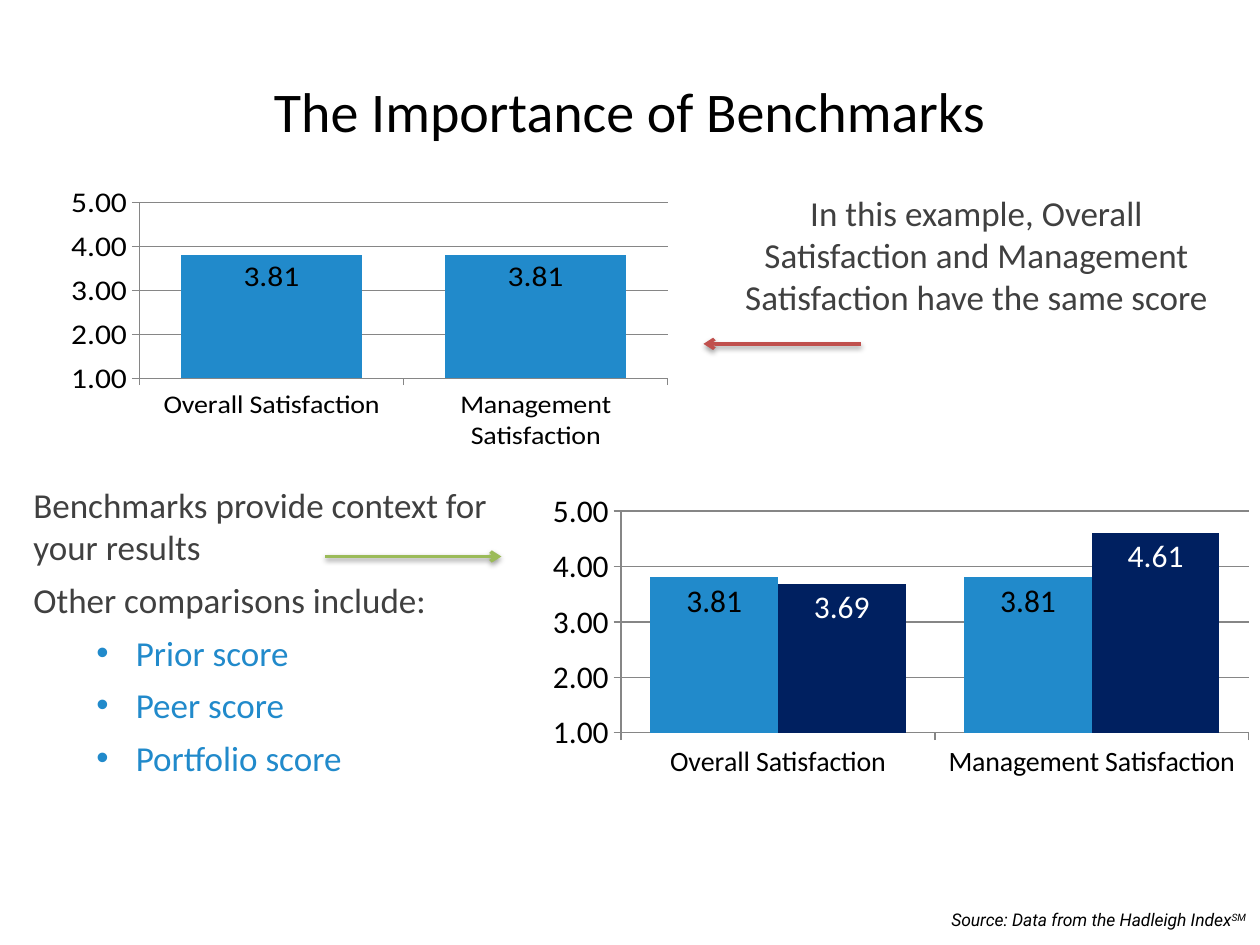
from lxml import etree
from pptx import Presentation
from pptx.chart.data import CategoryChartData
from pptx.dml.color import RGBColor
from pptx.enum.chart import XL_CHART_TYPE, XL_LABEL_POSITION, XL_TICK_MARK
from pptx.enum.shapes import MSO_CONNECTOR
from pptx.enum.text import MSO_ANCHOR, PP_ALIGN
from pptx.oxml import parse_xml
from pptx.oxml.ns import qn
from pptx.util import Pt

BLACK = RGBColor(0x00, 0x00, 0x00)
WHITE = RGBColor(0xFF, 0xFF, 0xFF)
GRAY = RGBColor(0x40, 0x40, 0x40)
GRID = RGBColor(0x86, 0x86, 0x86)
BLUE = RGBColor(0x21, 0x8A, 0xCB)
NAVY = RGBColor(0x00, 0x20, 0x60)
GREEN = RGBColor(0x9B, 0xBB, 0x59)
RED = RGBColor(0xC0, 0x50, 0x4D)
DRAWING_NS = "http://schemas.openxmlformats.org/drawingml/2006/main"
CHART_NS = "http://schemas.openxmlformats.org/drawingml/2006/chart"

TITLE = "The Importance of Benchmarks"
CATEGORIES = ["Overall Satisfaction", "Management Satisfaction"]
# Series: values, fill, label colour
SCORES = ((3.81, 3.81), BLUE, BLACK)
BENCHMARK = ((3.69, 4.61), NAVY, WHITE)
# Charts: box, inner plot area as fractions of the box, series
CHARTS = [
    ((306, 270, 408, 201), (0.12, 0.11, 0.88, 0.63), [SCORES, BENCHMARK]),
    ((-6, 90, 408, 168), (0.21, 0.17, 0.74, 0.66), [SCORES]),
]
EXAMPLE = "In this example, Overall Satisfaction and Management Satisfaction have the same score"
CONTEXT = ["Benchmarks provide context for your results", "Other comparisons include:"]
COMPARISONS = ["Prior score", "Peer score", "Portfolio score"]
SOURCE, SOURCE_MARK = "Source: Data from the Hadleigh Index", "SM"
# Arrows: start x, end x, y, colour
ARROWS = [(186, 286.5, 318, GREEN), (492, 402, 196.5, RED)]


def set_font(font, size, color, name="Calibri"):
    font.size = Pt(size)
    font.color.rgb = color
    font.name = name


def add_span(para, text, size, color, name="Calibri"):
    span = para.add_run()
    span.text = text
    set_font(span.font, size, color, name)
    return span


def add_box(slide, *bounds):
    frame = slide.shapes.add_textbox(*map(Pt, bounds)).text_frame
    frame.word_wrap = True
    return frame


def add_bullet(para):
    properties = para._p.get_or_add_pPr()
    properties.set("marL", str(Pt(58.5)))
    properties.set("indent", str(-Pt(22.5)))
    for tag, attribute, value in (("a:buFont", "typeface", "Arial"), ("a:buChar", "char", "•")):
        etree.SubElement(properties, qn(tag)).set(attribute, value)


def set_plot_area(chart, fractions):
    area = chart._chartSpace.find(".//" + qn("c:plotArea"))
    for layout in area.findall(qn("c:layout")):
        area.remove(layout)
    places = "".join(f'<c:{tag} val="{value}"/>' for tag, value in zip("xywh", fractions))
    area.insert(0, parse_xml(
        f'<c:layout xmlns:c="{CHART_NS}"><c:manualLayout><c:layoutTarget val="inner"/>'
        f'<c:xMode val="edge"/><c:yMode val="edge"/>{places}</c:manualLayout></c:layout>'))


def add_score_chart(slide, bounds, plot_area, series_list):
    data = CategoryChartData(number_format="0.00")
    data.categories = CATEGORIES
    for values, *_ in series_list:
        data.add_series("", values)
    chart = slide.shapes.add_chart(
        XL_CHART_TYPE.COLUMN_CLUSTERED, *map(Pt, bounds), data).chart
    chart.has_legend = False
    chart.has_title = False
    set_font(chart.font, 18, BLACK)
    set_plot_area(chart, plot_area)

    scale = chart.value_axis
    scale.minimum_scale, scale.maximum_scale, scale.major_unit = 1, 5, 1
    scale.major_gridlines.format.line.color.rgb = GRID
    scale.tick_labels.number_format = "#,##0.00"
    scale.tick_labels.number_format_is_linked = False
    for axis, size in ((scale, 18), (chart.category_axis, 16)):
        axis.major_tick_mark = XL_TICK_MARK.OUTSIDE
        axis.format.line.color.rgb = GRID
        set_font(axis.tick_labels.font, size, BLACK)

    plot = chart.plots[0]
    plot.gap_width, plot.overlap = 46, 0
    plot.vary_by_categories = False
    for series, (_, fill, label_color) in zip(plot.series, series_list):
        series.format.fill.solid()
        series.format.fill.fore_color.rgb = fill
        labels = series.data_labels
        labels.show_value = True
        labels.position = XL_LABEL_POSITION.INSIDE_END
        labels.number_format = "0.00"
        labels.number_format_is_linked = False
        set_font(labels.font, 18, label_color)


def add_arrow(slide, start, end, y, color):
    arrow = slide.shapes.add_connector(
        MSO_CONNECTOR.STRAIGHT, Pt(start), Pt(y), Pt(end), Pt(y))
    arrow.line.color.rgb = color
    arrow.line.width = Pt(2)
    etree.SubElement(arrow.line._get_or_add_ln(), qn("a:tailEnd")).set("type", "arrow")
    arrow._element.spPr.append(parse_xml(
        f'<a:effectLst xmlns:a="{DRAWING_NS}">'
        f'<a:outerShdw blurRad="{Pt(3.1)}" dist="{Pt(1.6)}" dir="5400000" rotWithShape="0">'
        '<a:srgbClr val="000000"><a:alpha val="38000"/></a:srgbClr>'
        '</a:outerShdw></a:effectLst>'))


def main():
    deck = Presentation()
    deck.slide_width, deck.slide_height = Pt(720), Pt(540)
    slide = deck.slides.add_slide(deck.slide_layouts[5])

    title = slide.shapes.title
    title.left, title.top, title.width, title.height = map(Pt, (36, 40, 648, 56))
    title.text_frame.vertical_anchor = MSO_ANCHOR.TOP
    para = title.text_frame.paragraphs[0]
    para.alignment = PP_ALIGN.CENTER
    add_span(para, TITLE, 32, BLACK)

    for bounds, plot_area, series_list in CHARTS:
        add_score_chart(slide, bounds, plot_area, series_list)

    para = add_box(slide, 408, 106, 300, 80).paragraphs[0]
    para.alignment = PP_ALIGN.CENTER
    para.space_after = Pt(6)
    add_span(para, EXAMPLE, 20, GRAY)

    frame = add_box(slide, 12, 273, 300, 177)
    for index, text in enumerate(CONTEXT + COMPARISONS):
        para = frame.add_paragraph() if index else frame.paragraphs[0]
        para.space_after = Pt(6)
        is_comparison = index >= len(CONTEXT)
        if is_comparison:
            para.level = 1
            add_bullet(para)
        add_span(para, text, 20, BLUE if is_comparison else GRAY)

    para = add_box(slide, 518, 516, 201, 19).paragraphs[0]
    para.alignment = PP_ALIGN.RIGHT
    for text in (SOURCE, SOURCE_MARK):
        span = add_span(para, text, 10, BLACK, "Roboto")
        span.font.italic = True
    span.font._element.set("baseline", "30000")

    for arrow in ARROWS:
        add_arrow(slide, *arrow)

    deck.save("out.pptx")


if __name__ == "__main__":
    main()
